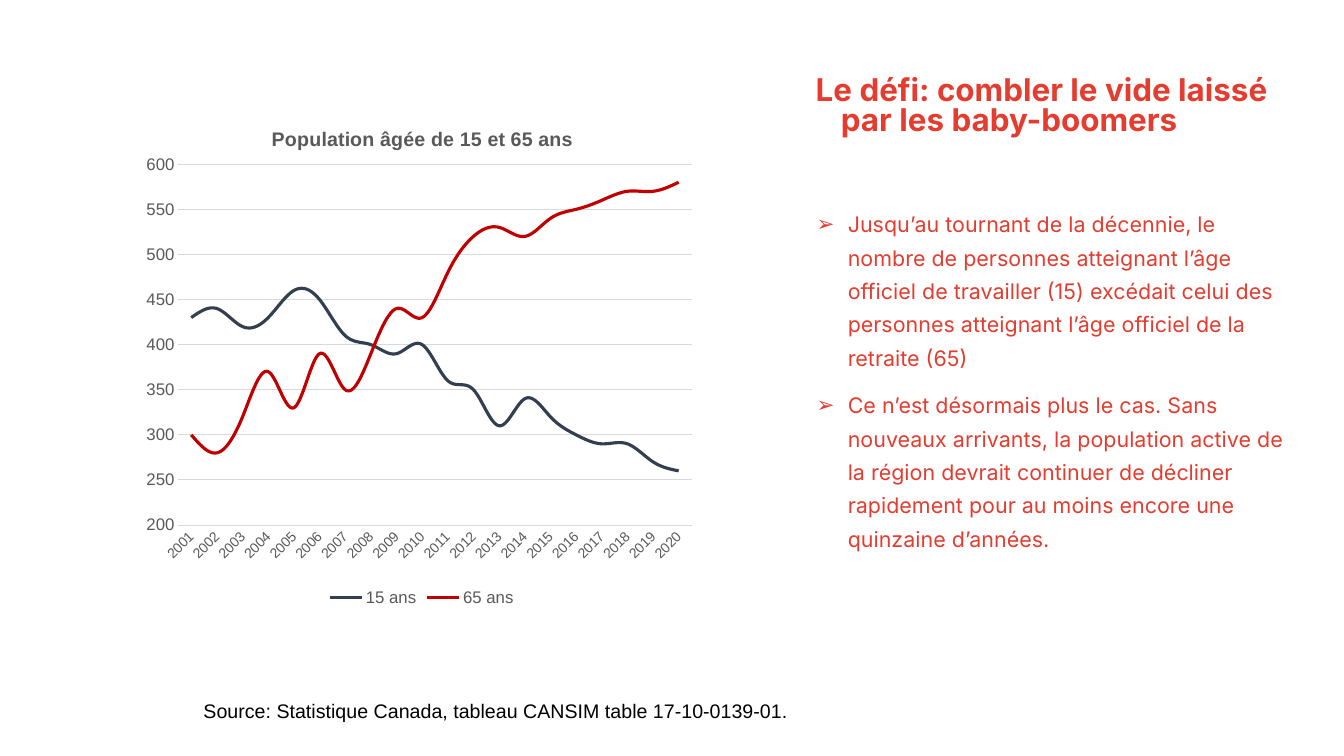
from dataclasses import dataclass

from lxml import etree
from pptx import Presentation
from pptx.chart import data
from pptx.dml.color import RGBColor
from pptx.enum import chart as chart_enum, text
from pptx.oxml import ns
from pptx.util import Inches, Pt


@dataclass(frozen=True)
class Theme:
    red: RGBColor = RGBColor(0xE4, 0x3D, 0x30)
    black: RGBColor = RGBColor(0, 0, 0)
    grey: RGBColor = RGBColor(0x59, 0x59, 0x59)
    rule: RGBColor = RGBColor(0xD9, 0xD9, 0xD9)
    navy: RGBColor = RGBColor(0x33, 0x3F, 0x50)
    crimson: RGBColor = RGBColor(0xC0, 0, 0)
    heading_font: str = "Inter"
    plain_font: str = "Arial"
    title_size: float = 22.4
    bullet_size: float = 15.3
    label_size: float = 14
    axis_size: float = 12
    year_size: float = 10


@dataclass(frozen=True)
class AgeGroup:
    name: str
    population: tuple[int, ...]
    color: RGBColor


THEME = Theme()
CHART_WIDTH, CHART_HEIGHT = Inches(5.65), Inches(5)
AGE_GROUPS = (
    AgeGroup("15 ans", (430, 440, 420, 430, 460, 450, 410, 400, 390, 400,
                        360, 350, 310, 340, 320, 300, 290, 290, 270, 260), THEME.navy),
    AgeGroup("65 ans", (300, 280, 320, 370, 330, 390, 350, 390, 440, 430,
                        480, 520, 530, 520, 540, 550, 560, 570, 570, 580), THEME.crimson),
)
ARGUMENTS = (
    "Jusqu’au tournant de la décennie, le nombre de personnes atteignant l’âge officiel "
    "de travailler (15) excédait celui des personnes atteignant l’âge officiel de la retraite (65)",
    "Ce n’est désormais plus le cas. Sans nouveaux arrivants, la population active de la région "
    "devrait continuer de décliner rapidement pour au moins encore une quinzaine d’années.",
)


def style(font, name: str, size: float, color: RGBColor, bold: bool = False) -> None:
    font.name, font.size, font.bold = name, Pt(size), bold
    font.color.rgb = color


def hang(paragraph, left: float, first: float) -> None:
    """Set the left margin and first-line indent, in inches."""
    properties = paragraph._p.get_or_add_pPr()
    properties.set("marL", str(Inches(left)))
    properties.set("indent", str(Inches(first)))


def add_bullet(paragraph, color: RGBColor) -> None:
    properties = paragraph._p.get_or_add_pPr()
    bullet_color = etree.SubElement(properties, ns.qn("a:buClr"))
    etree.SubElement(bullet_color, ns.qn("a:srgbClr"), val=str(color))
    etree.SubElement(properties, ns.qn("a:buFont"), typeface=THEME.plain_font)
    etree.SubElement(properties, ns.qn("a:buChar"), char="➢")


def set_layout(parent, index: int, **values) -> None:
    """Give a chart part a manual layout; lengths become fractions of the chart."""
    for old in parent.findall(ns.qn("c:layout")):
        parent.remove(old)
    layout = etree.Element(ns.qn("c:layout"))
    manual = etree.SubElement(layout, ns.qn("c:manualLayout"))
    extents = {"x": CHART_WIDTH, "y": CHART_HEIGHT, "w": CHART_WIDTH, "h": CHART_HEIGHT}
    for key, value in values.items():
        shown = value / extents[key] if key in extents else value
        etree.SubElement(manual, ns.qn(f"c:{key}"), val=str(shown))
    parent.insert(index, layout)


def add_title(slide) -> None:
    title = slide.shapes.title
    title.left, title.top = Inches(7.74), Inches(0.72)
    title.width, title.height = Inches(5.09), Inches(1.3)
    frame = title.text_frame
    frame.text = "Le défi: combler le vide laissé par les baby-boomers"
    frame.auto_size = text.MSO_AUTO_SIZE.NONE
    frame.vertical_anchor = text.MSO_ANCHOR.TOP
    heading = frame.paragraphs[0]
    heading.alignment = text.PP_ALIGN.LEFT
    heading.line_spacing = 0.8
    hang(heading, 0.5, -0.25)
    style(heading.font, THEME.heading_font, THEME.title_size, THEME.red, bold=True)


def add_arguments(slide) -> None:
    box = slide.shapes.add_textbox(Inches(7.75), Inches(1.97), Inches(5.09), Inches(4.33))
    frame = box.text_frame
    frame.word_wrap = True
    for number, argument in enumerate(ARGUMENTS):
        paragraph = frame.add_paragraph() if number else frame.paragraphs[0]
        paragraph.text = argument
        paragraph.line_spacing = 1.3
        if number:
            paragraph.space_before = Pt(10)
        hang(paragraph, 0.56, -0.31)
        add_bullet(paragraph, THEME.red)
        style(paragraph.font, THEME.heading_font, THEME.bullet_size, THEME.red)


def add_source(slide) -> None:
    box = slide.shapes.add_textbox(Inches(1.92), Inches(6.88), Inches(9.36), Inches(0.34))
    frame = box.text_frame
    frame.word_wrap = True
    frame.text = "Source: Statistique Canada, tableau CANSIM table 17-10-0139-01."
    style(frame.paragraphs[0].font, THEME.plain_font, THEME.label_size, THEME.black)


def style_axes(chart) -> None:
    years, population = chart.category_axis, chart.value_axis
    for axis, size in ((years, THEME.year_size), (population, THEME.axis_size)):
        axis.major_tick_mark = axis.minor_tick_mark = chart_enum.XL_TICK_MARK.NONE
        style(axis.tick_labels.font, THEME.plain_font, size, THEME.grey)
    years._element.find(ns.qn("c:txPr")).find(ns.qn("a:bodyPr")).set("rot", "-2700000")
    population.minimum_scale, population.maximum_scale = 200, 600
    population.major_unit = 50
    population.has_major_gridlines = True
    population.format.line.fill.background()
    for line in (years.format.line, population.major_gridlines.format.line):
        line.color.rgb = THEME.rule
        line.width = Pt(0.75)


def add_population_chart(slide) -> None:
    populations = data.CategoryChartData()
    populations.categories = [str(year) for year in range(2001, 2021)]
    for group in AGE_GROUPS:
        populations.add_series(group.name, group.population)
    chart = slide.shapes.add_chart(
        chart_enum.XL_CHART_TYPE.LINE, Inches(1.36), Inches(1.06),
        CHART_WIDTH, CHART_HEIGHT, populations).chart
    style(chart.font, THEME.plain_font, THEME.year_size, THEME.black)

    chart.has_title = True
    heading = chart.chart_title.text_frame
    heading.text = "Population âgée de 15 et 65 ans"
    style(heading.paragraphs[0].font, THEME.plain_font, THEME.label_size, THEME.grey, bold=True)
    set_layout(chart.chart_title._element, 1, xMode="edge", yMode="edge",
               x=Inches(1.3), y=Inches(0.16))
    set_layout(chart._chartSpace.chart.plotArea, 0, layoutTarget="inner", xMode="edge",
               yMode="edge", x=Inches(0.41), y=Inches(0.57), w=Inches(5.09), h=Inches(3.58))

    chart.has_legend = True
    chart.legend.position = chart_enum.XL_LEGEND_POSITION.BOTTOM
    chart.legend.include_in_layout = False
    style(chart.legend.font, THEME.plain_font, THEME.axis_size, THEME.grey)

    style_axes(chart)
    chart.plots[0].vary_by_categories = False
    for series, group in zip(chart.plots[0].series, AGE_GROUPS):
        series.smooth = True
        series.marker.style = chart_enum.XL_MARKER_STYLE.NONE
        series.format.line.color.rgb = group.color
        series.format.line.width = Pt(2.25)


def main() -> None:
    deck = Presentation()
    deck.slide_width, deck.slide_height = Inches(13.33), Inches(7.5)
    slide = deck.slides.add_slide(deck.slide_layouts.get_by_name("Title Only"))
    add_title(slide)
    add_arguments(slide)
    add_source(slide)
    add_population_chart(slide)
    deck.save("out.pptx")


if __name__ == "__main__":
    main()
